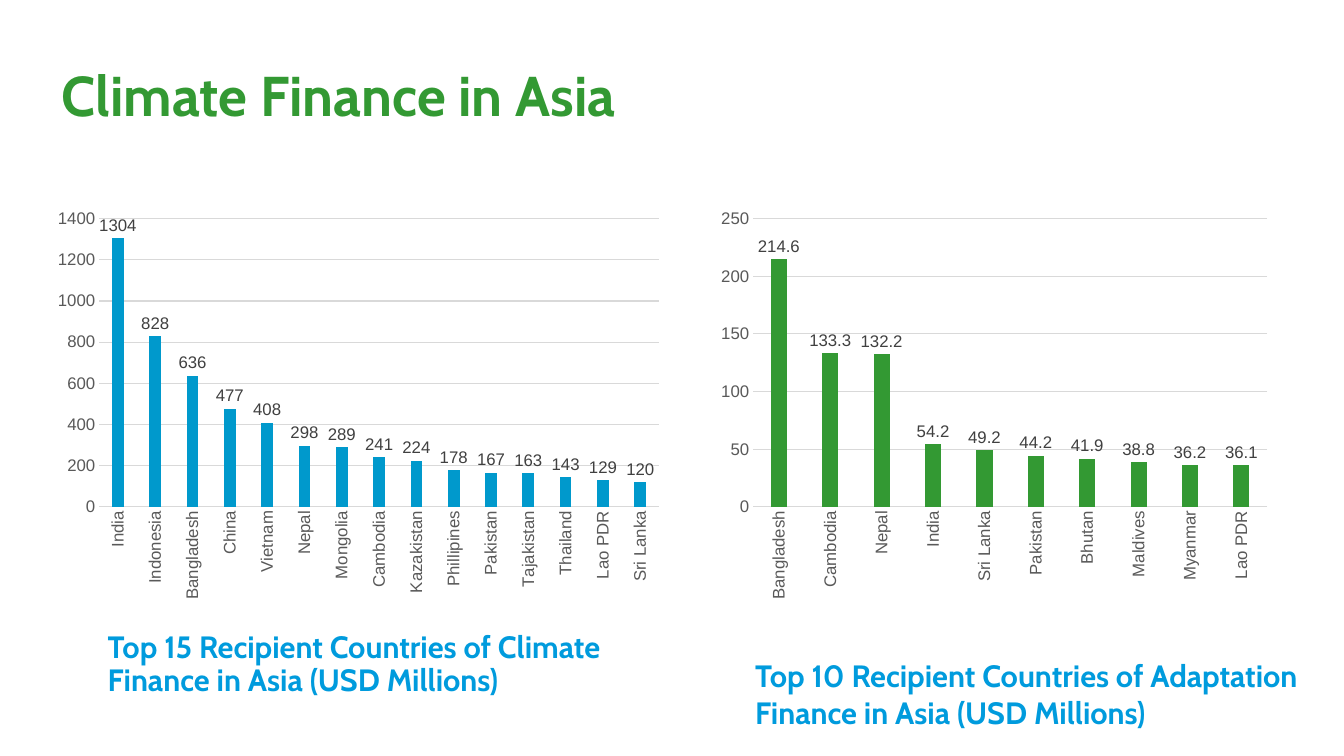
"""Build the slide on climate finance in Asia with two column charts."""
from pptx import Presentation
from pptx.chart.data import CategoryChartData
from pptx.dml.color import RGBColor
from pptx.enum.chart import XL_CHART_TYPE, XL_LABEL_POSITION, XL_TICK_MARK
from pptx.enum.text import MSO_ANCHOR, MSO_AUTO_SIZE, PP_ALIGN
from pptx.util import Inches, Pt

TITLE = "Climate Finance in Asia"
GREEN, BLUE, GRID = "339933", "009BDD", "D9D9D9"
HEAD = {"name": "Cabin", "size": Pt(40), "bold": True}
NOTE = {"name": "Cabin", "size": Pt(22), "bold": True}
TICK = {"name": "Arial", "size": Pt(12), "bold": False}
TOP, HEIGHT = 2, 4.03

CHARTS = [
    {
        "left": 0.45, "width": 6.21, "color": "0099CC", "max": 1400, "step": 200,
        "format": "0",
        "data": {
            "India": 1304, "Indonesia": 828, "Bangladesh": 636, "China": 477,
            "Vietnam": 408, "Nepal": 298, "Mongolia": 289, "Cambodia": 241,
            "Kazakistan": 224, "Phillipines": 178, "Pakistan": 167,
            "Tajakistan": 163, "Thailand": 143, "Lao PDR": 129, "Sri Lanka": 120,
        },
        "note": "Top 15 Recipient Countries of Climate Finance in Asia (USD Millions)",
        "box": (0.97, 6.22, 5.69, 1.1), "anchor": MSO_ANCHOR.TOP, "spacing": 0.9,
    },
    {
        "left": 7.04, "width": 5.64, "color": GREEN, "max": 250, "step": 50,
        "format": "0.0",
        "data": {
            "Bangladesh": 214.6, "Cambodia": 133.3, "Nepal": 132.2, "India": 54.2,
            "Sri Lanka": 49.2, "Pakistan": 44.2, "Bhutan": 41.9, "Maldives": 38.8,
            "Myanmar": 36.2, "Lao PDR": 36.1,
        },
        "note": "Top 10 Recipient Countries of Adaptation Finance in Asia (USD Millions)",
        "box": (7.39, 6.4, 5.94, 0.9), "anchor": MSO_ANCHOR.BOTTOM, "spacing": 1.0,
    },
]


def rgb(code):
    """Turn a hex string into a colour."""
    return RGBColor.from_string(code)


def style(item, values):
    """Set each attribute of an object from a dict."""
    for name, value in values.items():
        setattr(item, name, value)


def paint(font, values, color):
    """Format a font and colour it."""
    style(font, values)
    font.color.rgb = rgb(color)


def rule(line):
    """Give a chart line the grid look."""
    line.color.rgb = rgb(GRID)
    line.width = Pt(0.75)


def write(shape, text, font, color, anchor, spacing):
    """Fill a text shape with one left-aligned paragraph."""
    frame = shape.text_frame
    style(frame, {"word_wrap": True, "auto_size": MSO_AUTO_SIZE.NONE,
                  "vertical_anchor": anchor, "text": text})
    para = frame.paragraphs[0]
    style(para, {"alignment": PP_ALIGN.LEFT, "line_spacing": spacing})
    paint(para.runs[0].font, font, color)


def plot(slide, item):
    """Add one column chart."""
    data = CategoryChartData(number_format=item["format"])
    data.categories = list(item["data"])
    data.add_series("Series 1", list(item["data"].values()))
    place = [Inches(n) for n in (item["left"], TOP, item["width"], HEIGHT)]
    chart = slide.shapes.add_chart(XL_CHART_TYPE.COLUMN_CLUSTERED, *place, data).chart
    style(chart, {"has_legend": False, "has_title": False})
    paint(chart.font, {"name": "Arial", "size": Pt(10)}, "000000")

    bars = chart.plots[0]
    style(bars, {"gap_width": 219, "overlap": -27, "vary_by_categories": False,
                 "has_data_labels": True})
    fill = bars.series[0].format.fill
    fill.solid()
    fill.fore_color.rgb = rgb(item["color"])
    labels = bars.data_labels
    style(labels, {"show_value": True, "position": XL_LABEL_POSITION.OUTSIDE_END})
    paint(labels.font, TICK, "404040")

    cats, vals = chart.category_axis, chart.value_axis
    for axis in (cats, vals):
        style(axis, {"major_tick_mark": XL_TICK_MARK.NONE,
                     "minor_tick_mark": XL_TICK_MARK.NONE})
        paint(axis.tick_labels.font, TICK, "595959")
    rule(cats.format.line)
    cats._element.txPr.bodyPr.set("rot", "-5400000")
    style(vals, {"minimum_scale": 0, "maximum_scale": item["max"],
                 "major_unit": item["step"], "has_major_gridlines": True})
    style(vals.tick_labels, {"number_format": "0", "number_format_is_linked": False})
    rule(vals.major_gridlines.format.line)
    vals.format.line.fill.background()


def main():
    """Make and save the slide."""
    deck = Presentation()
    style(deck, {"slide_width": Inches(13.33), "slide_height": Inches(7.5)})
    slide = deck.slides.add_slide(deck.slide_layouts[5])
    title = slide.shapes.title
    style(title, {"left": Inches(0.51), "top": Inches(0.65),
                  "width": Inches(10.65), "height": Inches(0.65)})
    write(title, TITLE, HEAD, GREEN, MSO_ANCHOR.MIDDLE, 0.9)
    for item in CHARTS:
        plot(slide, item)
        box = slide.shapes.add_textbox(*[Inches(n) for n in item["box"]])
        write(box, item["note"], NOTE, BLUE, item["anchor"], item["spacing"])
    deck.save("out.pptx")


if __name__ == "__main__":
    main()
